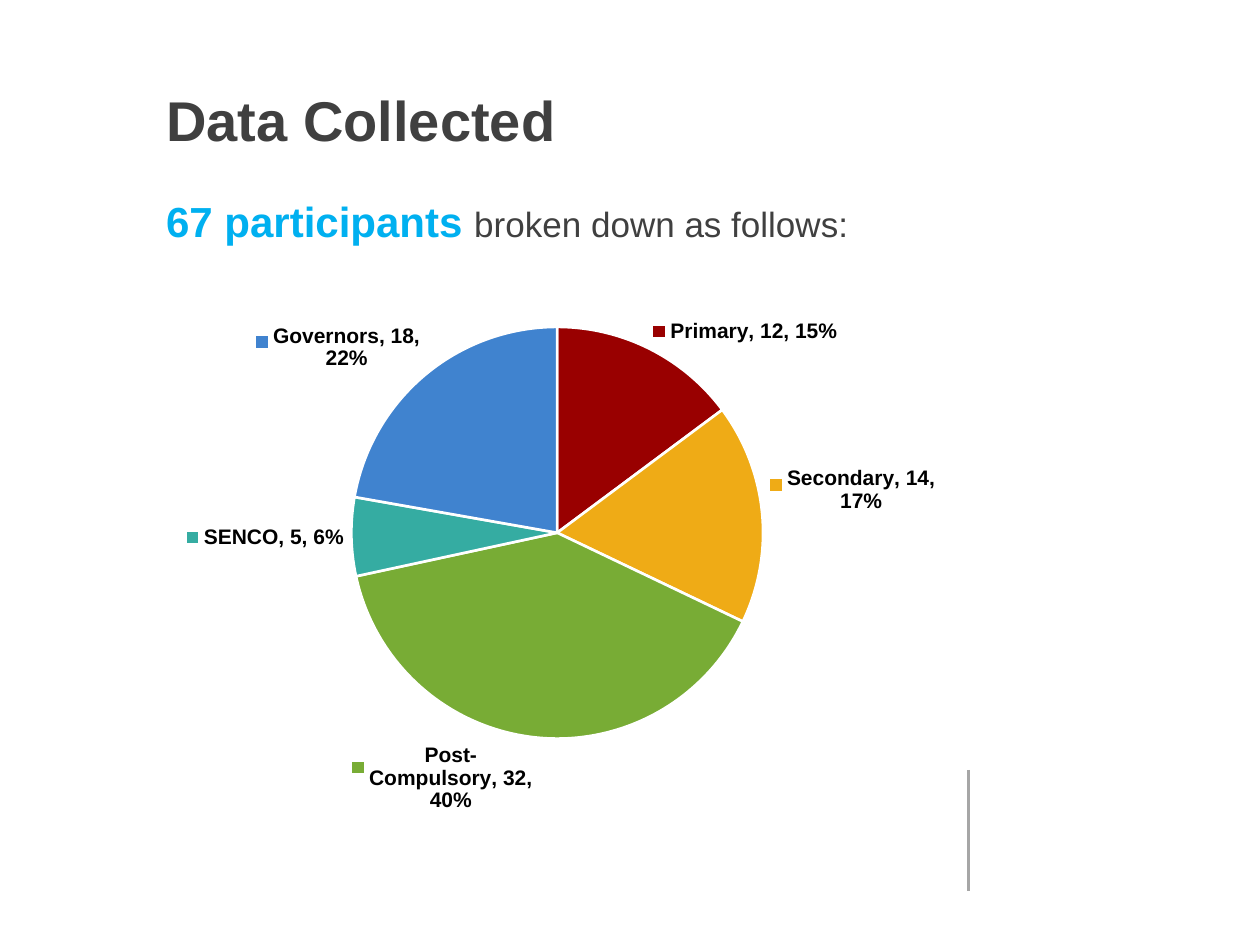
from lxml import etree
from pptx import Presentation
from pptx.chart.data import CategoryChartData
from pptx.dml.color import RGBColor
from pptx.enum.chart import XL_CHART_TYPE, XL_LABEL_POSITION
from pptx.enum.shapes import MSO_CONNECTOR
from pptx.enum.text import MSO_ANCHOR, MSO_AUTO_SIZE, PP_ALIGN
from pptx.oxml.ns import qn
from pptx.util import Cm, Pt

PIE = XL_CHART_TYPE.PIE
OUT_END = XL_LABEL_POSITION.OUTSIDE_END
STRAIGHT = MSO_CONNECTOR.STRAIGHT
BOTTOM, TOP = MSO_ANCHOR.BOTTOM, MSO_ANCHOR.TOP
NO_FIT = MSO_AUTO_SIZE.NONE
LEFT = PP_ALIGN.LEFT

FONT = "Arial"
DARK = RGBColor(0x40, 0x40, 0x40)
CYAN = RGBColor(0x00, 0xB0, 0xF0)
GREY = RGBColor(0xA6, 0xA6, 0xA6)
BLACK = RGBColor(0x00, 0x00, 0x00)
WHITE = RGBColor(0xFF, 0xFF, 0xFF)
RED = RGBColor(0x99, 0x00, 0x00)
GOLD = RGBColor(0xEF, 0xAB, 0x16)
GREEN = RGBColor(0x78, 0xAC, 0x35)
TEAL = RGBColor(0x35, 0xAC, 0xA2)
BLUE = RGBColor(0x40, 0x83, 0xCF)

GROUPS = [
    ("Primary", 12, RED),
    ("Secondary", 14, GOLD),
    ("Post-Compulsory", 32, GREEN),
    ("SENCO", 5, TEAL),
    ("Governors", 18, BLUE),
]


def style(font, size, color, bold):
    font.name = FONT
    font.size = Pt(size)
    font.bold = bold
    font.color.rgb = color


def write(shape, runs, anchor):
    """Fill a shape with one paragraph of (text, size, color, bold) runs."""
    frame = shape.text_frame
    frame.word_wrap = True
    frame.auto_size = NO_FIT
    frame.vertical_anchor = anchor
    para = frame.paragraphs[0]
    para.alignment = LEFT
    for text, size, color, bold in runs:
        run = para.add_run()
        run.text = text
        style(run.font, size, color, bold)


def add_head(slide, left, top, width):
    # Title
    title = slide.shapes.title
    title.left, title.top = Cm(left), Cm(top)
    title.width, title.height = Cm(width), Cm(3)
    write(title, [("Data Collected", 32, DARK, True)], BOTTOM)

    # Lead line
    lead = slide.shapes.add_textbox(
        Cm(left), Cm(top + 3.61), Cm(width + 0.2), Cm(1.47))
    write(lead, [("67 participants ", 24, CYAN, True),
                 ("broken down as follows:", 20, DARK, False)], TOP)


def set_plot(chart, x, y, w, h):
    """Fix the inner plot area, as fractions of the chart box."""
    area = chart._chartSpace.chart.plotArea
    for old in area.findall(qn("c:layout")):
        area.remove(old)
    layout = etree.Element(qn("c:layout"))
    area.insert(0, layout)
    manual = etree.SubElement(layout, qn("c:manualLayout"))
    parts = [("layoutTarget", "inner"), ("xMode", "edge"), ("yMode", "edge"),
             ("x", x), ("y", y), ("w", w), ("h", h)]
    for tag, val in parts:
        etree.SubElement(manual, qn("c:" + tag)).set("val", str(val))


def add_pie(slide, left, top, width, height):
    data = CategoryChartData()
    data.categories = [name for name, _, _ in GROUPS]
    data.add_series("Series 1", [count for _, count, _ in GROUPS])
    chart = slide.shapes.add_chart(
        PIE, Cm(left), Cm(top), Cm(width), Cm(height), data).chart
    chart.has_title = False
    chart.has_legend = False
    style(chart.font, 10, BLACK, False)
    set_plot(chart, 0.28, 0.1, 0.49, 0.74)

    # Slices
    plot = chart.plots[0]
    plot.vary_by_categories = True
    series = plot.series[0]
    for i, (_, _, color) in enumerate(GROUPS):
        look = series.points[i].format
        look.fill.solid()
        look.fill.fore_color.rgb = color
        look.line.color.rgb = WHITE
        look.line.width = Pt(1.5)

    # Labels
    labels = series.data_labels
    style(labels.font, 12, BLACK, True)
    labels.position = OUT_END
    labels.show_legend_key = True
    labels.show_category_name = True
    labels.show_value = True
    labels.show_percentage = True
    mark = etree.Element(qn("c:separator"))
    mark.text = ", "
    labels._element.find(qn("c:showBubbleSize")).addnext(mark)


def add_rule(slide, left, top, height):
    rule = slide.shapes.add_connector(
        STRAIGHT, Cm(left), Cm(top), Cm(left), Cm(top + height))
    rule.line.color.rgb = GREY
    rule.line.width = Pt(1.5)
    etree.SubElement(rule._element.spPr, qn("a:effectLst"))


def main():
    deck = Presentation()
    deck.slide_width, deck.slide_height = Cm(25.4), Cm(19.05)
    slide = deck.slides.add_slide(deck.slide_layouts[5])
    add_rule(slide, 19.53, 15.52, 2.44)
    add_head(slide, 3.1, 0.2, 19.2)
    add_pie(slide, 2.34, 5.44, 16.94, 11.28)
    deck.save("out.pptx")


if __name__ == "__main__":
    main()
